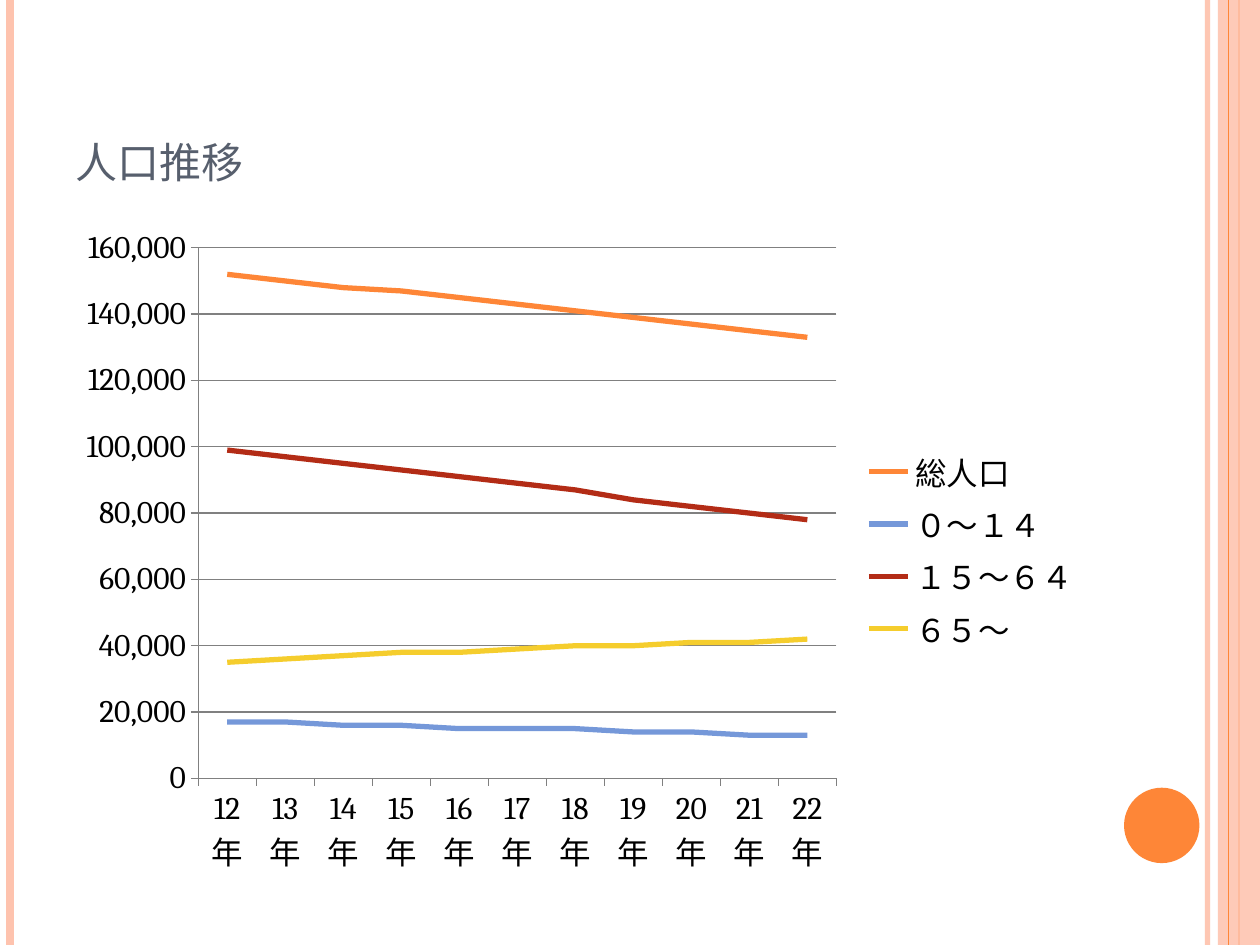
from lxml.etree import SubElement
from pptx import Presentation
from pptx.chart.data import CategoryChartData
from pptx.dml.color import RGBColor
from pptx.enum.chart import XL_CHART_TYPE, XL_LEGEND_POSITION, XL_MARKER_STYLE, XL_TICK_MARK
from pptx.enum.shapes import MSO_CONNECTOR, MSO_SHAPE
from pptx.enum.text import MSO_ANCHOR, PP_ALIGN
from pptx.oxml import parse_xml
from pptx.oxml.ns import nsdecls, qn
from pptx.util import Cm, Pt

ORANGE = RGBColor(0xFE, 0x86, 0x37)
PEACH = RGBColor(0xFE, 0xC3, 0xAE)
SLATE = RGBColor(0x57, 0x5F, 0x6D)
BLUE = RGBColor(0x75, 0x98, 0xD9)
RED = RGBColor(0xB3, 0x2C, 0x16)
YELLOW = RGBColor(0xF5, 0xCD, 0x2D)
GRAY = RGBColor(0x80, 0x80, 0x80)
BLACK = RGBColor(0, 0, 0)
FONT = "Cambria"

YEARS = [f"{year}年" for year in range(12, 23)]
POPULATION = [
    ("総人口", ORANGE, [152, 150, 148, 147, 145, 143, 141, 139, 137, 135, 133]),
    ("０～１４", BLUE, [17, 17, 16, 16, 15, 15, 15, 14, 14, 13, 13]),
    ("１５～６４", RED, [99, 97, 95, 93, 91, 89, 87, 84, 82, 80, 78]),
    ("６５～", YELLOW, [35, 36, 37, 38, 38, 39, 40, 40, 41, 41, 42]),
]


def set_alpha(fill_owner, percent):
    color = next(fill_owner.iter(qn("a:srgbClr")))
    SubElement(color, qn("a:alpha")).set("val", str(percent * 1000))


def write_text(frame, text, *, size, color, font=FONT, small_caps=False,
               align=PP_ALIGN.LEFT, anchor=MSO_ANCHOR.BOTTOM):
    frame.word_wrap = True
    frame.vertical_anchor = anchor
    paragraph = frame.paragraphs[0]
    paragraph.alignment = align
    run = paragraph.add_run()
    run.text = text
    run.font.size = Pt(size)
    run.font.name = font
    run.font.color.rgb = color
    if small_caps:
        run.font._element.set("cap", "small")


def add_stripe(slide, x, top, height, color, width, alpha=None):
    stripe = slide.shapes.add_connector(
        MSO_CONNECTOR.STRAIGHT, Cm(x), Cm(top), Cm(x), Cm(top + height))
    stripe.line.color.rgb = color
    stripe.line.width = Pt(width)
    properties = stripe._element.spPr
    SubElement(properties, qn("a:effectLst"))
    if alpha:
        set_alpha(properties, alpha)


def add_solid(slide, preset, left, top, width, height, color, alpha=None):
    solid = slide.shapes.add_shape(preset, Cm(left), Cm(top), Cm(width), Cm(height))
    solid.shadow.inherit = False
    solid.fill.solid()
    solid.fill.fore_color.rgb = color
    solid.line.fill.background()
    if alpha:
        set_alpha(solid._element.spPr, alpha)


def add_borders(slide, left, top, width, height):
    right = left + width
    add_stripe(slide, right - 1.06, top, height, PEACH, 3, alpha=93)
    add_stripe(slide, left + 0.2, top, height, PEACH, 4.5)
    add_stripe(slide, right - 0.42, top, height, ORANGE, 1.5)
    add_solid(slide, MSO_SHAPE.RECTANGLE, right - 0.85, top, 0.85, height, PEACH, alpha=87)
    add_stripe(slide, right - 0.64, top, height, ORANGE, 0.75)
    add_solid(slide, MSO_SHAPE.OVAL, right - 2.74, top + height - 3.17, 1.52, 1.52, ORANGE)


def place_title(slide, left, top, width, height):
    title = slide.shapes.title
    title.left, title.top, title.width, title.height = map(Cm, (left, top, width, height))
    write_text(title.text_frame, "人口推移", size=30, color=SLATE, small_caps=True)


def set_plot_layout(chart, x, y, width, height):
    plot_area = chart._chartSpace.chart.plotArea
    for layout in plot_area.findall(qn("c:layout")):
        plot_area.remove(layout)
    plot_area.insert(0, parse_xml(
        f'<c:layout {nsdecls("c")}><c:manualLayout><c:layoutTarget val="inner"/>'
        f'<c:xMode val="edge"/><c:yMode val="edge"/><c:x val="{x}"/><c:y val="{y}"/>'
        f'<c:w val="{width}"/><c:h val="{height}"/></c:manualLayout></c:layout>'))


def add_population_chart(slide, left, top, width, height):
    data = CategoryChartData(number_format="#,##0")
    data.categories = YEARS
    for name, _, thousands in POPULATION:
        data.add_series(name, [value * 1000 for value in thousands])
    chart = slide.shapes.add_chart(
        XL_CHART_TYPE.LINE, Cm(left), Cm(top), Cm(width), Cm(height), data).chart
    chart.has_title = False
    chart.font.size = Pt(18)
    chart.font.name = FONT
    chart.font.color.rgb = BLACK
    chart.has_legend = True
    chart.legend.position = XL_LEGEND_POSITION.RIGHT
    chart.legend.include_in_layout = False
    chart.plots[0].vary_by_categories = False
    set_plot_layout(chart, 0.13, 0.05, 0.62, 0.79)

    for axis in (chart.category_axis, chart.value_axis):
        axis.major_tick_mark = XL_TICK_MARK.OUTSIDE
        axis.minor_tick_mark = XL_TICK_MARK.NONE
        axis.format.line.color.rgb = GRAY
    population_axis = chart.value_axis
    population_axis.minimum_scale = 0
    population_axis.maximum_scale = 160000
    population_axis.major_unit = 20000
    population_axis.tick_labels.number_format = "#,##0"
    population_axis.tick_labels.number_format_is_linked = False
    population_axis.has_major_gridlines = True
    population_axis.major_gridlines.format.line.color.rgb = GRAY

    for series, (_, color, _) in zip(chart.plots[0].series, POPULATION):
        series.smooth = False
        series.marker.style = XL_MARKER_STYLE.NONE
        series.format.line.color.rgb = color
        series.format.line.width = Pt(3)


def main():
    deck = Presentation()
    deck.slide_width, deck.slide_height = Cm(25.4), Cm(19.05)
    slide = deck.slides.add_slide(deck.slide_layouts[5])
    add_borders(slide, 0, 0, 25.4, 19.05)
    place_title(slide, 1.27, 0.76, 20.75, 3.18)
    add_population_chart(slide, 1.3, 4.32, 20.75, 13.54)
    deck.save("out.pptx")


if __name__ == "__main__":
    main()
